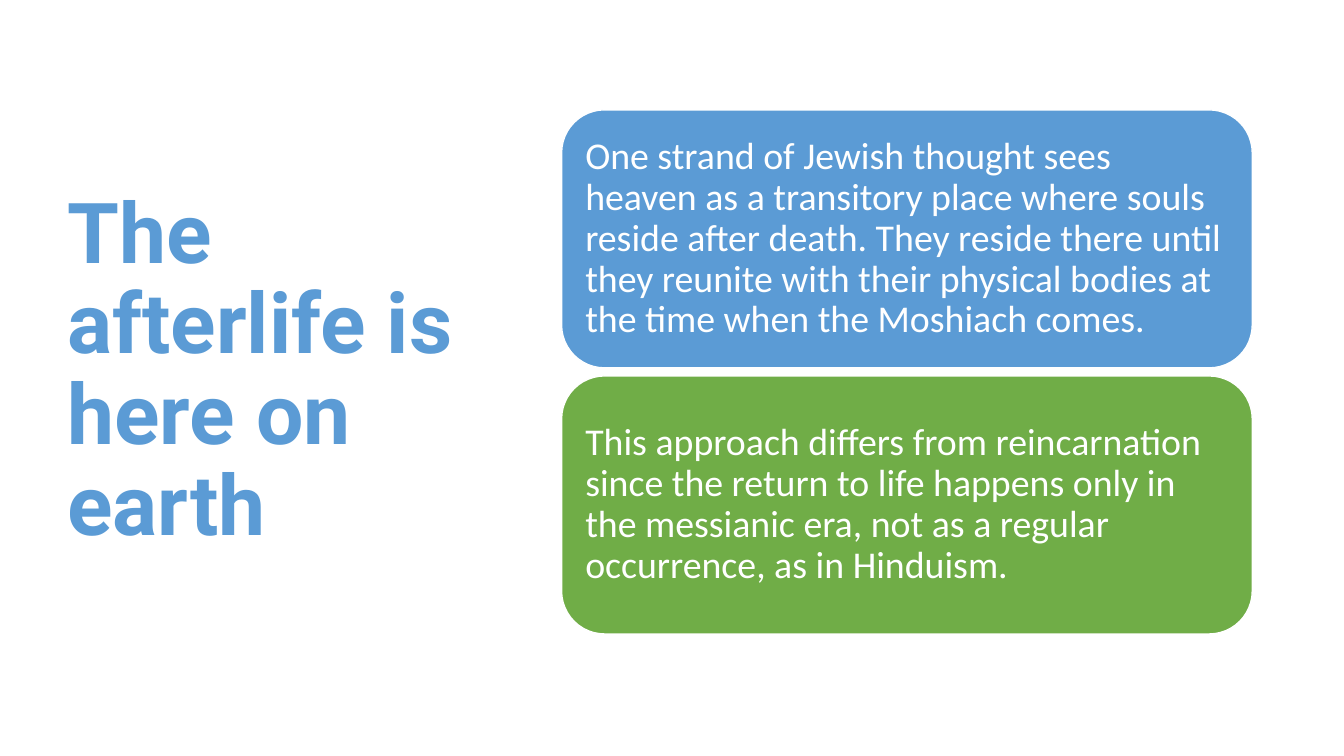
from pptx import Presentation
from pptx.dml.color import RGBColor
from pptx.enum.shapes import MSO_SHAPE
from pptx.enum.text import MSO_ANCHOR, PP_ALIGN
from pptx.util import Inches, Pt

BLUE = RGBColor(0x5B, 0x9B, 0xD5)
GREEN = RGBColor(0x70, 0xAD, 0x47)
WHITE = RGBColor(0xFF, 0xFF, 0xFF)

CARD_LEFT, CARD_TOP = 5.57, 1.09
CARD_WIDTH, CARD_HEIGHT, CARD_GAP = 6.85, 2.56, 0.08
CARDS = [
    (BLUE, "One strand of Jewish thought sees heaven as a transitory place where souls "
           "reside after death. They reside there until they reunite with their physical "
           "bodies at the time when the Moshiach comes."),
    (GREEN, "This approach differs from reincarnation since the return to life happens only "
            "in the messianic era, not as a regular occurrence, as in Hinduism."),
]


class SlideBuilder:
    title_font = "Roboto"
    body_font = "Calibri"
    line_spacing = 0.9

    def __init__(self, slide):
        self.slide = slide

    def set_text(self, shape, text, font_name, size, color, bold=False):
        text_frame = shape.text_frame
        text_frame.word_wrap = True
        text_frame.vertical_anchor = MSO_ANCHOR.MIDDLE
        text_frame.text = text
        paragraph = text_frame.paragraphs[0]
        paragraph.alignment = PP_ALIGN.LEFT
        paragraph.line_spacing = self.line_spacing
        font = paragraph.runs[0].font
        font.name = font_name
        font.size = Pt(size)
        font.bold = bold
        font.color.rgb = color

    def add_title(self, text, left, top, width, height):
        shape = self.slide.shapes.add_textbox(
            Inches(left), Inches(top), Inches(width), Inches(height))
        self.set_text(shape, text, self.title_font, 60, BLUE, bold=True)

    def add_card(self, text, fill, left, top, width, height):
        shape = self.slide.shapes.add_shape(
            MSO_SHAPE.ROUNDED_RECTANGLE,
            Inches(left), Inches(top), Inches(width), Inches(height))
        shape.shadow.inherit = False
        shape.fill.solid()
        shape.fill.fore_color.rgb = fill
        shape.line.color.rgb = WHITE
        shape.line.width = Pt(1)
        text_frame = shape.text_frame
        text_frame.margin_left = text_frame.margin_right = Inches(0.11)
        text_frame.margin_top = text_frame.margin_bottom = Inches(0.11)
        self.set_text(shape, text, self.body_font, 27, WHITE)


def main():
    presentation = Presentation()
    presentation.slide_width = Inches(13.33)
    presentation.slide_height = Inches(7.5)
    builder = SlideBuilder(presentation.slides.add_slide(presentation.slide_layouts[6]))
    builder.add_title("The afterlife is here on earth", 0.57, 0.68, 4.16, 6.02)
    for index, (fill, text) in enumerate(CARDS):
        top = CARD_TOP + index * (CARD_HEIGHT + CARD_GAP)
        builder.add_card(text, fill, CARD_LEFT, top, CARD_WIDTH, CARD_HEIGHT)
    presentation.save("out.pptx")


if __name__ == "__main__":
    main()
